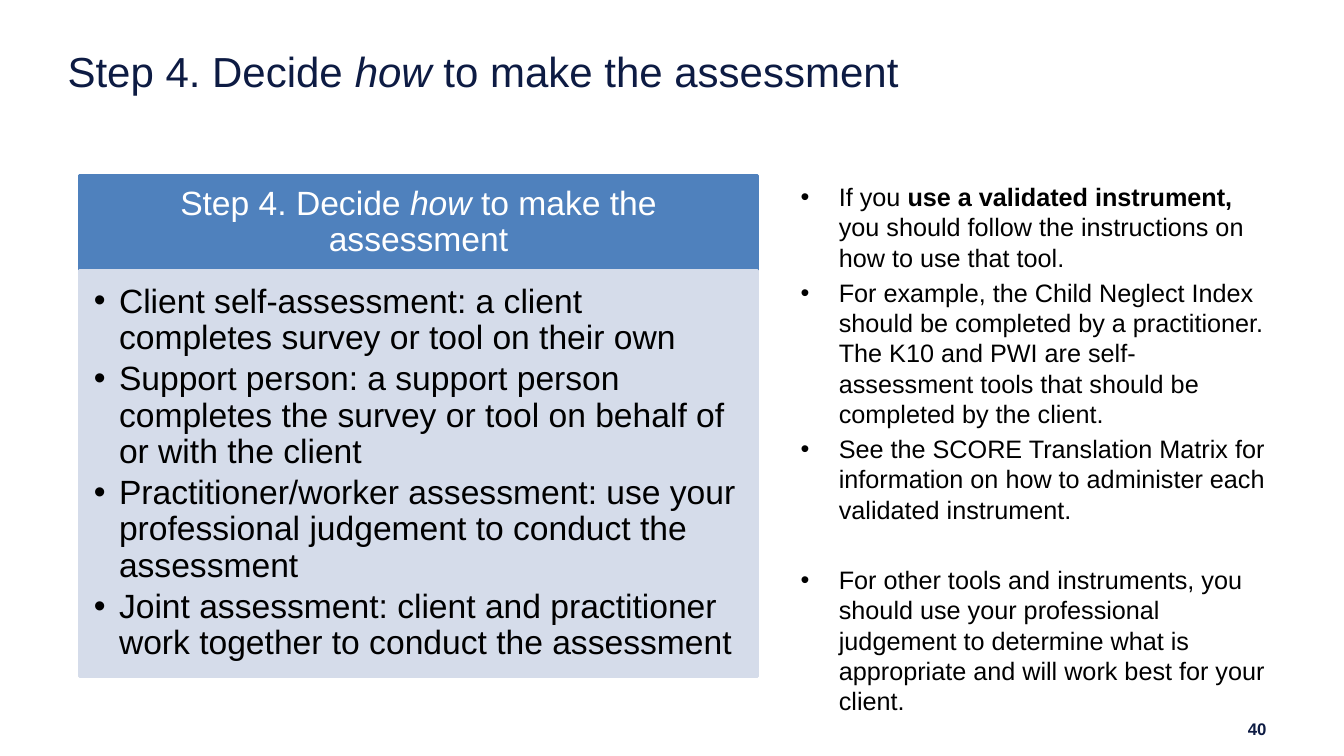
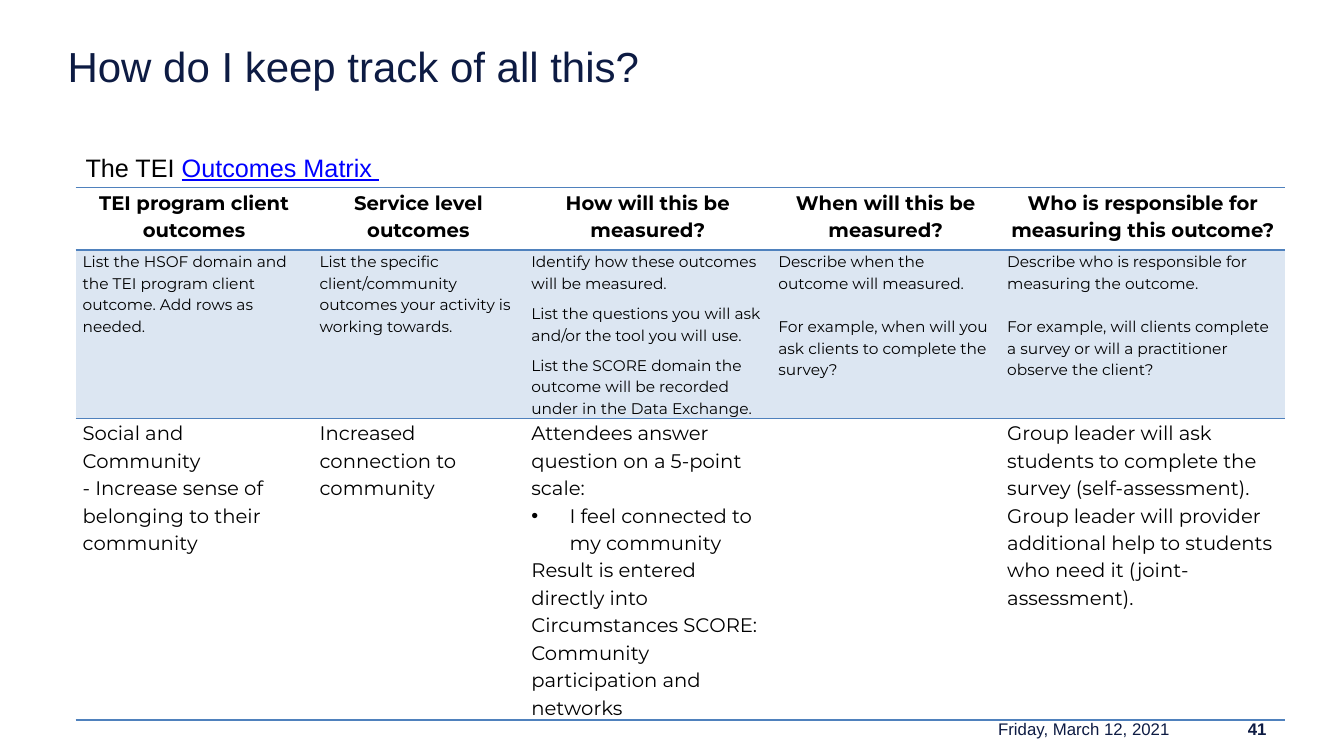
from dataclasses import dataclass, field

import lxml.etree
import pptx
import pptx.dml.color
import pptx.enum.shapes
import pptx.enum.text
import pptx.oxml.ns
import pptx.util

Inches = pptx.util.Inches
Pt = pptx.util.Pt
RGBColor = pptx.dml.color.RGBColor
Align = pptx.enum.text.PP_ALIGN
Anchor = pptx.enum.text.MSO_ANCHOR
qn = pptx.oxml.ns.qn

NAVY = RGBColor(0x0D, 0x1B, 0x43)
BLUE = RGBColor(0x4F, 0x81, 0xBD)
PANEL = RGBColor(0xD5, 0xDC, 0xEA)
TINT = RGBColor(0xDC, 0xE6, 0xF2)
LINK = RGBColor(0x00, 0x00, 0xFF)
BLACK = RGBColor(0x00, 0x00, 0x00)
WHITE = RGBColor(0xFF, 0xFF, 0xFF)

TITLE_AND_BODY, TITLE_ONLY = 1, 5
PLAIN_TABLE = "{2D5ABB26-0587-4C30-8999-92F81FD0307C}"


@dataclass
class Para:
    spans: list
    formats: dict = field(default_factory=dict)
    bullet: float = 0


def apply(target, formats):
    for name, value in formats.items():
        setattr(target, name, value)


def font_of(size, color=BLACK, name="Arial", **extra):
    return {"size": Pt(size), "color": color, "name": name, **extra}


def insets(left, top, right, bottom):
    sides = {"left": left, "top": top, "right": right, "bottom": bottom}
    return {f"margin_{side}": Inches(size) for side, size in sides.items()}


class Deck:
    def __init__(self):
        self.deck = pptx.Presentation()
        self.deck.slide_width, self.deck.slide_height = Inches(13.33), Inches(7.5)
        self.page = None

    def start(self, layout, title, top, number):
        self.page = self.deck.slides.add_slide(self.deck.slide_layouts[layout])
        box = self.page.shapes.title
        self.place(box, 0.67, top, 12, 0.66)
        self.fill_frame(box.text_frame, [Para(title)], font_of(30, NAVY),
                        {"alignment": Align.LEFT},
                        {"vertical_anchor": Anchor.TOP, **insets(0, 0, 0, 0)})
        self.footer(str(number), 11.57, 1.09, bold=True)

    def place(self, shape, left, top, width, height):
        apply(shape, {"left": Inches(left), "top": Inches(top),
                      "width": Inches(width), "height": Inches(height)})

    def fill_frame(self, frame, paras, font, para_formats=None, frame_formats=None):
        apply(frame, {"word_wrap": True, "auto_size": pptx.enum.text.MSO_AUTO_SIZE.NONE,
                      **(frame_formats or {})})
        self.fill_paras(frame, paras, font, para_formats)

    def fill_paras(self, frame, paras, font, para_formats=None):
        for index, content in enumerate(paras):
            para = frame.paragraphs[0] if index == 0 else frame.add_paragraph()
            if content.bullet:
                self.add_bullet(para, content.bullet)
            apply(para, {**(para_formats or {}), **content.formats})
            if index == 0:
                para.space_before = Pt(0)
            for item in content.spans:
                text, changes = (item, {}) if isinstance(item, str) else item
                span = para.add_run()
                span.text = text
                formats = {**font, **changes}
                span.font.color.rgb = formats.pop("color")
                apply(span.font, formats)

    def add_bullet(self, para, indent):
        properties = para._p.get_or_add_pPr()
        properties.set("marL", str(Inches(indent)))
        properties.set("indent", str(-Inches(indent)))
        lxml.etree.SubElement(properties, qn("a:buFont"), typeface="Arial")
        lxml.etree.SubElement(properties, qn("a:buChar"), char="•")

    def text(self, place, paras, font, para_formats=None, frame_formats=None):
        box = self.page.shapes.add_textbox(*map(Inches, place))
        self.fill_frame(box.text_frame, paras, font, para_formats, frame_formats)

    def footer(self, text, left, width, bold=False):
        self.text((left, 7.12, width, 0.23), [Para([text])], font_of(12, NAVY, bold=bold),
                  {"alignment": Align.RIGHT}, {"vertical_anchor": Anchor.MIDDLE})

    def panel(self, place, color, paras, font, para_formats, frame_formats):
        box = self.page.shapes.add_shape(pptx.enum.shapes.MSO_SHAPE.RECTANGLE, *map(Inches, place))
        box.shadow.inherit = False
        box.fill.solid()
        box.fill.fore_color.rgb = color
        box.line.color.rgb = color
        box.line.width = Pt(2)
        self.fill_frame(box.text_frame, paras, font, para_formats, frame_formats)

    def body(self, place, paras, font, para_formats):
        box = self.page.placeholders[1]
        self.place(box, *place)
        self.fill_frame(box.text_frame, paras, font, para_formats)

    def table(self, left, top, widths, heights, rows, styles):
        shape = self.page.shapes.add_table(len(heights), len(widths), Inches(left), Inches(top),
                                           Inches(sum(widths)), Inches(sum(heights)))
        table = shape.table
        apply(table, {"first_row": False, "horz_banding": False})
        table._tbl.tblPr.find(qn("a:tableStyleId")).text = PLAIN_TABLE
        for column, width in zip(table.columns, widths):
            column.width = Inches(width)
        for row, height, contents, style in zip(table.rows, heights, rows, styles):
            row.height = Inches(height)
            for cell, paras in zip(row.cells, contents):
                apply(cell, insets(0.07, 0, 0.07, 0))
                self.fill_paras(cell.text_frame, paras, style["font"],
                                {"line_spacing": 1.15, "alignment": style["align"]})
                for edge in style["edges"]:
                    self.add_edge(cell, edge)
                if style["fill"] is None:
                    cell.fill.background()
                else:
                    cell.fill.solid()
                    cell.fill.fore_color.rgb = style["fill"]

    def add_edge(self, cell, edge):
        properties = cell._tc.get_or_add_tcPr()
        line = lxml.etree.SubElement(properties, qn(f"a:{edge}"), w=str(Pt(1)))
        fill = lxml.etree.SubElement(line, qn("a:solidFill"))
        lxml.etree.SubElement(fill, qn("a:srgbClr"), val=str(BLUE))


def build_assessment(deck):
    heading = ["Step 4. Decide ", ("how", {"italic": True}), " to make the assessment"]
    deck.start(TITLE_AND_BODY, heading, 0.45, 40)
    deck.panel((0.79, 1.74, 6.72, 0.94), BLUE, [Para(heading)], font_of(24, WHITE),
               {"alignment": Align.CENTER, "line_spacing": 0.9},
               {"vertical_anchor": Anchor.MIDDLE, **insets(0.19, 0.11, 0.19, 0.11)})
    methods = [
        "Client self-assessment: a client completes survey or tool on their own",
        "Support person: a support person completes the survey or tool on behalf of "
        "or with the client",
        "Practitioner/worker assessment: use your professional judgement to conduct the assessment",
        "Joint assessment: client and practitioner work together to conduct the assessment",
    ]
    deck.panel((0.79, 2.68, 6.72, 4.03), PANEL,
               [Para([method], bullet=0.25) for method in methods], font_of(24),
               {"alignment": Align.LEFT, "line_spacing": 0.9, "space_after": Pt(3.6)},
               {"vertical_anchor": Anchor.TOP, **insets(0.14, 0.14, 0.19, 0.21)})
    advice = [
        Para(["If you ", ("use a validated instrument, ", {"bold": True}),
              "you should follow the instructions on how to use that tool."], bullet=0.38),
        Para(["For example, the Child Neglect Index should be completed by a practitioner. "
              "The K10 and PWI are self-assessment tools that should be completed by the client."],
             bullet=0.38),
        Para(["See the SCORE Translation Matrix for information on how to administer each "
              "validated instrument."], bullet=0.38),
        Para(["For other tools and instruments, you should use your professional judgement to "
              "determine what is appropriate and will work best for your client."],
             {"space_before": Pt(28.8)}, bullet=0.38),
    ]
    deck.body((7.84, 1.75, 4.82, 5.02), advice, font_of(18), {"space_before": Pt(3.6)})


def build_matrix(deck):
    deck.start(TITLE_ONLY, ["How do I keep track of all this?"], 0.4, 41)
    deck.footer("Friday, March 12, 2021", 8.59, 3.11)
    after = {"space_after": Pt(6)}
    apart = {"space_before": Pt(15.5)}
    headers = ["TEI program client outcomes", "Service level outcomes", "How will this be measured?",
               "When will this be measured?", "Who is responsible for measuring this outcome?"]
    guidance = [
        [Para(["List the HSOF domain and the TEI program client outcome. Add rows as needed."])],
        [Para(["List the specific client/community outcomes your activity is working towards."])],
        [Para(["Identify how these outcomes will be measured."], after),
         Para(["List the questions you will ask and/or the tool you will use."], after),
         Para(["List the SCORE domain the outcome will be recorded under in the Data Exchange."])],
        [Para(["Describe when the outcome will measured."]),
         Para(["For example, when will you ask clients to complete the survey?"], apart)],
        [Para(["Describe who is responsible for measuring the outcome."]),
         Para(["For example, will clients complete a survey or will a practitioner observe "
               "the client?"], apart)],
    ]
    example = [
        [Para(["Social and Community"]),
         Para(["- Increase sense of belonging to their community"])],
        [Para(["Increased connection to community"])],
        [Para(["Attendees answer question on a 5-point scale:"]),
         Para(["I feel connected to my community"], bullet=0.38),
         Para(["Result is entered directly into Circumstances SCORE: Community participation "
               "and networks"])],
        [],
        [Para(["Group leader will ask students to complete the survey (self-assessment). "
               "Group leader will provider additional help to students who need it "
               "(joint-assessment)."])],
    ]
    styles = [
        {"font": font_of(14, name="Montserrat", bold=True), "align": Align.CENTER,
         "edges": ["lnT", "lnB"], "fill": None},
        {"font": font_of(11, name="Montserrat"), "align": Align.LEFT,
         "edges": ["lnT"], "fill": TINT},
        {"font": font_of(14, name="Montserrat"), "align": Align.LEFT,
         "edges": ["lnB"], "fill": None},
    ]
    deck.table(0.75, 1.86, [2.35, 2.1, 2.45, 2.27, 2.83], [0.62, 1.67, 2.99],
               [[[Para([header])] for header in headers], guidance, example], styles)
    deck.text((0.75, 1.46, 5.75, 0.4),
              [Para(["The TEI ", ("Outcomes Matrix ", {"color": LINK, "underline": True})])],
              font_of(18))


def main():
    deck = Deck()
    build_assessment(deck)
    build_matrix(deck)
    deck.deck.save("out.pptx")


if __name__ == "__main__":
    main()
